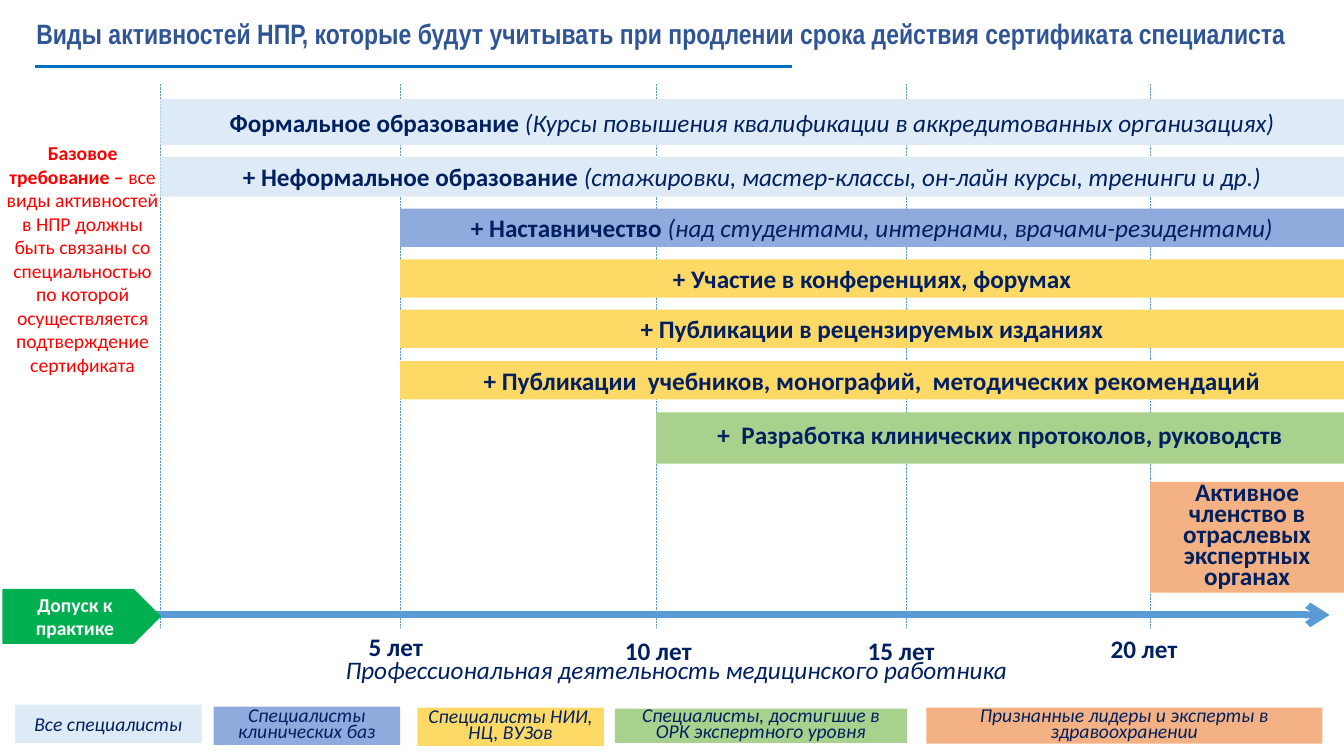
from dataclasses import dataclass

from lxml import etree
from pptx import Presentation
from pptx.dml.color import RGBColor
from pptx.enum.dml import MSO_LINE
from pptx.enum.shapes import MSO_CONNECTOR, MSO_SHAPE
from pptx.enum.text import MSO_ANCHOR, MSO_AUTO_SIZE, PP_ALIGN
from pptx.oxml.ns import qn
from pptx.util import Pt

RECT, PLATE = MSO_SHAPE.RECTANGLE, MSO_SHAPE.PENTAGON
STRAIGHT, DOTS = MSO_CONNECTOR.STRAIGHT, MSO_LINE.ROUND_DOT
MIDDLE, TOP = MSO_ANCHOR.MIDDLE, MSO_ANCHOR.TOP
LEFT, CENTER = PP_ALIGN.LEFT, PP_ALIGN.CENTER
FIXED, GROW = MSO_AUTO_SIZE.NONE, MSO_AUTO_SIZE.SHAPE_TO_FIT_TEXT


@dataclass(frozen=True)
class Theme:
    head: str = "Arial Narrow"
    body: str = "Calibri"
    title: str = "2F5597"
    rule: str = "0070C0"
    axis: str = "5B9BD5"
    ink: str = "002060"
    white: str = "FFFFFF"
    alert: str = "FF0000"
    start: str = "00B050"
    all: str = "DEEBF7"
    clinic: str = "8FAADC"
    science: str = "FFD966"
    expert: str = "A9D18E"
    leader: str = "F4B183"
    big: int = 20
    mid: int = 18
    small: int = 14


T = Theme()
WIDE, HIGH = 960, 540
TIGHT = 0.7

TITLE = ("Виды активностей НПР, которые будут учитывать при продлении "
         "срока действия сертификата специалиста")
START = "Допуск к практике"
CAPTION = "Профессиональная деятельность медицинского работника"
NOTE = [("Базовое требование – ", "b"),
        ("все виды активностей в НПР должны быть связаны со специальностью "
         "по которой осуществляется подтверждение сертификата", "")]

# Position of each career stage on the axis, by years in practice
STAGES = {0: 114.5, 5: 285.8, 10: 468.7, 15: 647.3, 20: 821.5}
# Years: left, top, width of the label
YEARS = {5: (256.3, 447.1, 59.8), 10: (439.2, 450, 69.8),
         15: (612.7, 450, 69.8), 20: (786.2, 448.6, 69.8)}

# First stage, top, height, colour, line spacing, text parts
BARS = [
    (0, 70.6, 33.1, T.all, None,
     [("Формальное образование", "b"),
      (" (Курсы повышения квалификации в аккредитованных организациях)", "i")]),
    (0, 112.3, 28.1, T.all, None,
     [("+ Неформальное образование ", "b"),
      ("(стажировки, мастер-классы, он-лайн курсы, тренинги и др.)", "i")]),
    (5, 149, 27.4, T.clinic, None,
     [("+ Наставничество ", "b"),
      ("(над студентами, интернами, врачами-резидентами)", "i")]),
    (5, 185.2, 27.4, T.science, None,
     [("+ Участие в конференциях, форумах", "b")]),
    (5, 221.2, 27.4, T.science, None,
     [("+ Публикации в рецензируемых изданиях", "b")]),
    (5, 257.9, 27.4, T.science, None,
     [("+ Публикации  учебников, монографий,  методических рекомендаций", "b")]),
    (10, 294.5, 36.7, T.expert, TIGHT,
     [("+  Разработка клинических протоколов, руководств", "b")]),
    (20, 344.2, 79.2, T.leader, TIGHT,
     [("Активное членство в отраслевых экспертных органах", "b")]),
]

# Left, top, width, height, colour, line spacing, text
LEGEND = [
    (10.8, 503.3, 133.2, 27.4, T.all, None, "Все специалисты"),
    (152.6, 504.7, 133.2, 27.4, T.clinic, TIGHT, "Специалисты клинических баз"),
    (298.1, 505.4, 133.2, 27.4, T.science, TIGHT, "Специалисты НИИ, НЦ, ВУЗов"),
    (439.2, 506.2, 208.8, 24.5, T.expert, TIGHT,
     "Специалисты, достигшие в ОРК экспертного уровня"),
    (661.7, 505.4, 283, 25.9, T.leader, TIGHT,
     "Признанные лидеры и эксперты в здравоохранении"),
]


def rgb(code):
    return RGBColor.from_string(code)


def write(shape, parts, size, color=T.ink, font=T.body, align=CENTER,
          gap=None, anchor=MIDDLE):
    """Fill a shape with one paragraph of (text, style) parts; b bold, i italic."""
    frame = shape.text_frame
    frame.word_wrap = True
    frame.auto_size = FIXED
    frame.vertical_anchor = anchor
    para = frame.paragraphs[0]
    para.text = parts[0][0]
    for text, _ in parts[1:]:
        para.add_run().text = text
    para.alignment = align
    if gap:
        para.line_spacing = gap
    for run, (_, style) in zip(para.runs, parts):
        run.font.name, run.font.size = font, Pt(size)
        run.font.color.rgb = rgb(color)
        run.font.bold, run.font.italic = "b" in style, "i" in style
    return frame


def block(slide, box, fill, kind=RECT):
    shape = slide.shapes.add_shape(kind, *map(Pt, box))
    shape.shadow.inherit = False
    shape.fill.solid()
    shape.fill.fore_color.rgb = rgb(fill)
    shape.line.fill.background()
    return shape


def label(slide, box, parts, size, wrap=False, **look):
    shape = slide.shapes.add_textbox(*map(Pt, box))
    frame = write(shape, parts, size, anchor=TOP, **look)
    frame.word_wrap = wrap
    frame.auto_size = GROW


def stroke(slide, ends, color, width, dash=None, arrow=False):
    link = slide.shapes.add_connector(STRAIGHT, *map(Pt, ends))
    link.line.color.rgb = rgb(color)
    link.line.width = Pt(width)
    if dash:
        link.line.dash_style = dash
    props = link._element.spPr
    if arrow:
        etree.SubElement(props.find(qn("a:ln")), qn("a:tailEnd"), type="arrow")
    etree.SubElement(props, qn("a:effectLst"))


def main():
    deck = Presentation()
    deck.slide_width, deck.slide_height = Pt(WIDE), Pt(HIGH)
    slide = deck.slides.add_slide(deck.slide_layouts[5])

    title = slide.shapes.title
    title.left, title.top = Pt(18.7), Pt(-2.9)
    title.width, title.height = Pt(931), Pt(56.9)
    write(title, [(TITLE, "b")], T.big, T.title, T.head, LEFT, 0.9)

    stroke(slide, (78.5, 439.2, 949.7, 439.2), T.axis, 5, arrow=True)
    for x in STAGES.values():
        stroke(slide, (x, 59.8, x, 448.6), T.axis, 0.5, DOTS)

    for stage, top, high, fill, gap, parts in BARS:
        left = STAGES[stage]
        bar = block(slide, (left, top, WIDE - left, high), fill)
        write(bar, parts, T.mid, gap=gap)

    for year, (left, top, wide) in YEARS.items():
        label(slide, (left, top, wide, 28.8), [(f"{year} лет", "b")], T.mid,
              align=LEFT)
    label(slide, (239.8, 463.7, 538.6, 28.8), [(CAPTION, "i")], T.mid,
          align=LEFT)

    start = block(slide, (2.2, 421.2, 112.3, 38.2), T.start, PLATE)
    start.line.color.rgb = rgb(T.start)
    start.line.width = Pt(1)
    write(start, [(START, "b")], T.small, T.white)

    for *box, fill, gap, text in LEGEND:
        write(block(slide, box, fill), [(text, "i")], T.small, gap=gap)

    label(slide, (-3.6, 97.2, 125.3, 193.7), NOTE, T.small, wrap=True,
          color=T.alert)
    stroke(slide, (25.2, 47.5, 565.9, 47.5), T.rule, 2.25)
    deck.save("out.pptx")


if __name__ == "__main__":
    main()
